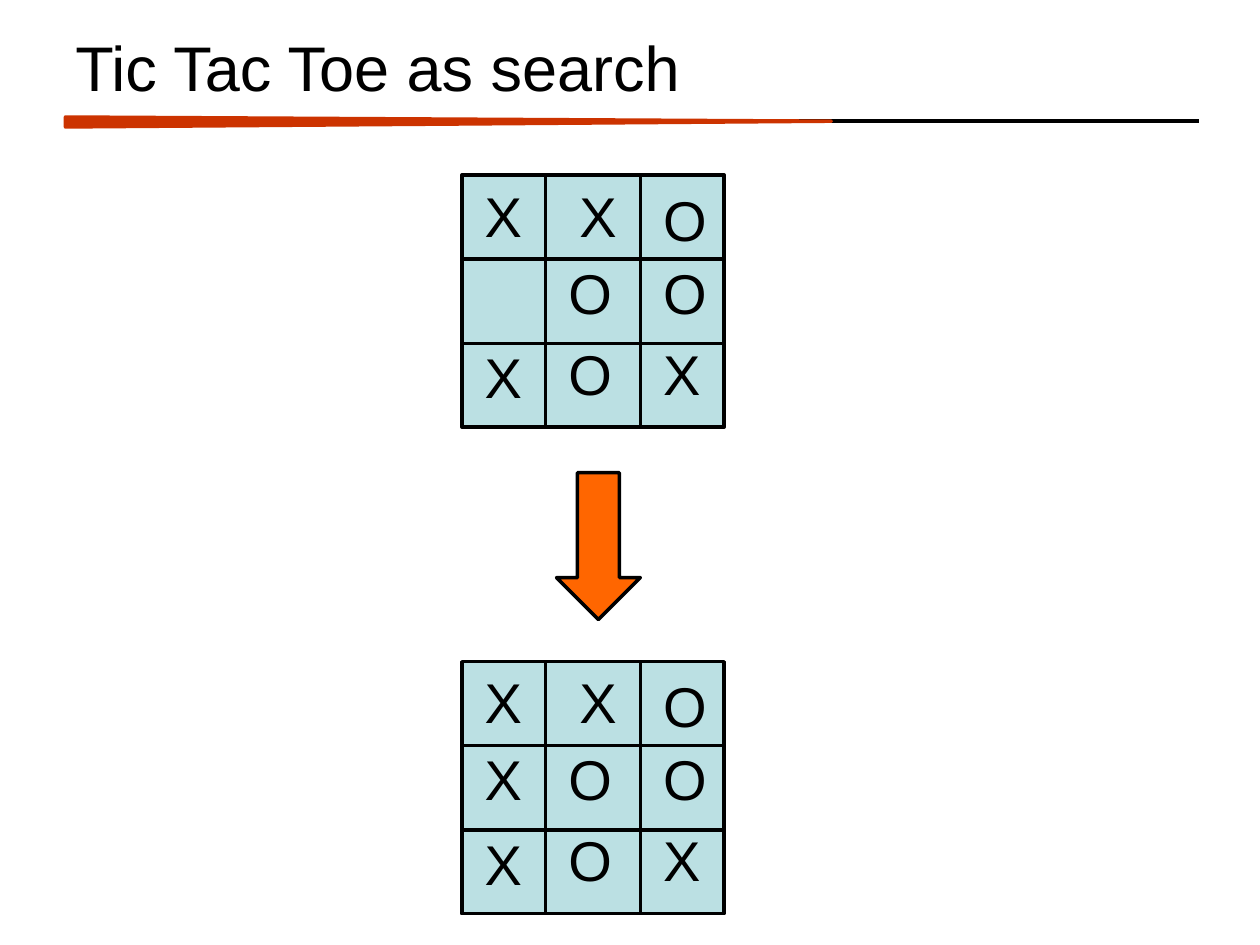
import pptx
import pptx.dml.color
import pptx.enum.shapes
import pptx.enum.text
import pptx.oxml.ns
import pptx.util
from lxml import etree
from pptx.util import Cm

SHAPES = pptx.enum.shapes.MSO_SHAPE
BLACK, RED, ORANGE, BOARD_BLUE = "000000", "CC3300", "FF6600", "BBE0E3"

TITLE = "Tic Tac Toe as search"
BOARDS = [
    (3.53, ["XXO", " OO", "XOX"]),
    (13.34, ["XXO", "XOO", "XOX"]),
]
BOARD_LEFT, BOARD_WIDTH, BOARD_HEIGHT = 9.31, 5.29, 5.08
COLUMN_LINES = (1.69, 3.6)
ROW_LINES = (1.69, 3.39)
MARK_X = [(0.21, 2.12, 3.81), (0.21, 1.9, 3.81), (0.21, 1.9, 3.81)]
MARK_Y = [(0, 0, 0.08), (1.55, 1.55, 1.55), (3.25, 3.18, 3.18)]
MARK_WIDTH, MARK_HEIGHT = 1.69, 1.62


def color(value):
    return pptx.dml.color.RGBColor.from_string(value)


def add_text(parent, text, left, top, width, height, size, anchor="TOP", grow=False):
    box = parent.add_textbox(Cm(left), Cm(top), Cm(width), Cm(height))
    frame = box.text_frame
    frame.word_wrap = True
    frame.vertical_anchor = pptx.enum.text.MSO_ANCHOR[anchor]
    if grow:
        frame.auto_size = pptx.enum.text.MSO_AUTO_SIZE.SHAPE_TO_FIT_TEXT
    run = frame.paragraphs[0].add_run()
    run.text = text
    run.font.name = "Arial"
    run.font.size = pptx.util.Pt(size)
    run.font.color.rgb = color(BLACK)


def add_figure(parent, preset, left, top, width, height, fill, outline=BLACK):
    figure = parent.add_shape(preset, Cm(left), Cm(top), Cm(width), Cm(height))
    figure.shadow.inherit = False
    figure.fill.solid()
    figure.fill.fore_color.rgb = color(fill)
    figure.line.color.rgb = color(outline)
    figure.line.width = pptx.util.Pt(2)
    return figure


def add_line(parent, x1, y1, x2, y2):
    line = parent.add_connector(
        pptx.enum.shapes.MSO_CONNECTOR.STRAIGHT, Cm(x1), Cm(y1), Cm(x2), Cm(y2))
    line.line.color.rgb = color(BLACK)
    line.line.width = pptx.util.Pt(2)
    etree.SubElement(line._element.spPr, pptx.oxml.ns.qn("a:effectLst"))


def add_board(parent, top, rows):
    board = parent.add_group_shape().shapes
    right, bottom = BOARD_LEFT + BOARD_WIDTH, top + BOARD_HEIGHT
    add_figure(board, SHAPES.RECTANGLE, BOARD_LEFT, top,
               BOARD_WIDTH, BOARD_HEIGHT, BOARD_BLUE)
    for offset in COLUMN_LINES:
        add_line(board, BOARD_LEFT + offset, top, BOARD_LEFT + offset, bottom)
    for offset in ROW_LINES:
        add_line(board, BOARD_LEFT, top + offset, right, top + offset)
    for marks, xs, ys in zip(rows, MARK_X, MARK_Y):
        for mark, x, y in zip(marks, xs, ys):
            if mark.strip():
                add_text(board, mark, BOARD_LEFT + x, top + y,
                         MARK_WIDTH, MARK_HEIGHT, 32, grow=True)


def main():
    deck = pptx.Presentation()
    deck.slide_width, deck.slide_height = Cm(25.4), Cm(19.05)
    shapes = deck.slides.add_slide(deck.slide_layouts[6]).shapes
    add_line(shapes, 1.32, 2.44, 24.18, 2.44)
    wedge = add_figure(shapes, SHAPES.ISOSCELES_TRIANGLE,
                       8.94, -5.26, 0.2, 15.44, RED, RED)
    wedge.rotation = 90
    wedge.adjustments[0] = 0.42
    add_text(shapes, TITLE, 1.27, 0.43, 22.86, 1.83, 36, anchor="MIDDLE")
    add_figure(shapes, SHAPES.DOWN_ARROW, 11.22, 9.53, 1.69, 2.96, ORANGE)
    for top, rows in BOARDS:
        add_board(shapes, top, rows)
    deck.save("out.pptx")


if __name__ == "__main__":
    main()
